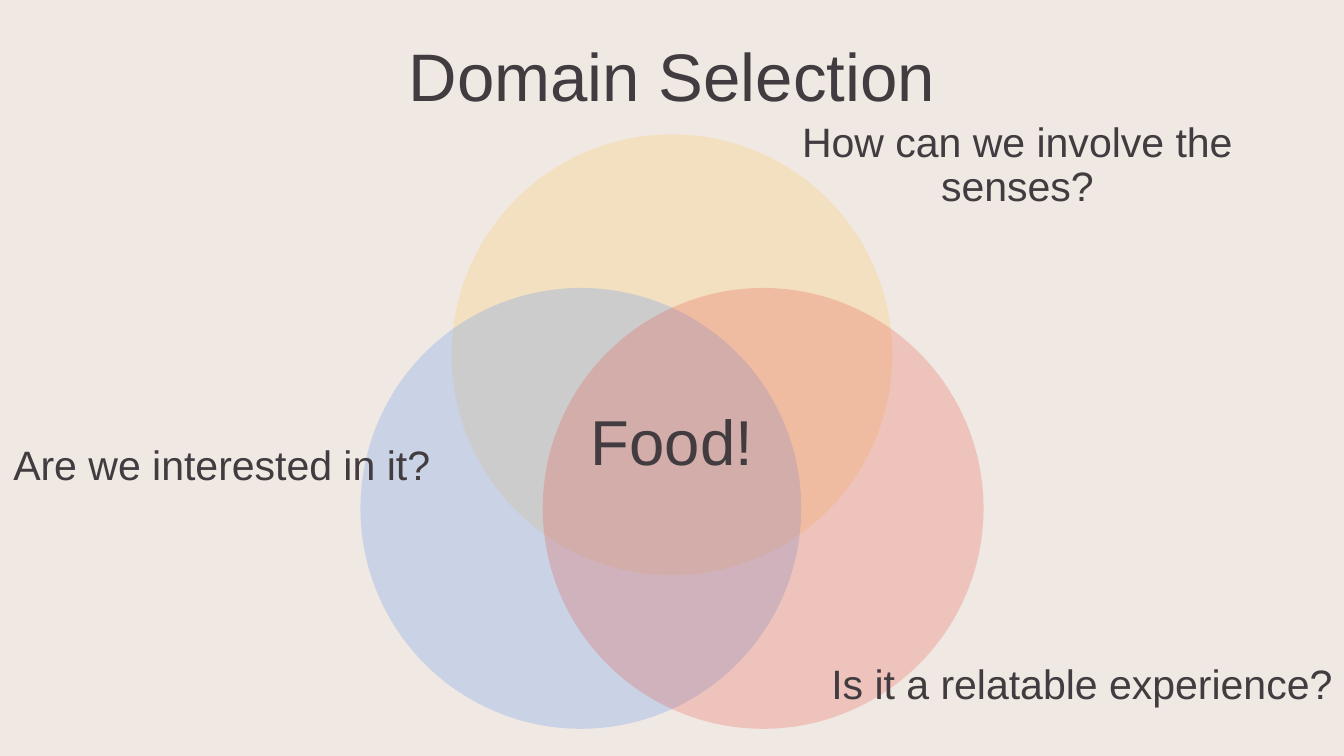
from lxml import etree
from pptx import Presentation
from pptx.dml.color import RGBColor
from pptx.enum.shapes import MSO_SHAPE
from pptx.enum.text import MSO_ANCHOR, PP_ALIGN
from pptx.oxml.ns import qn
from pptx.util import Inches, Pt

OVAL = MSO_SHAPE.OVAL
BOTTOM = MSO_ANCHOR.BOTTOM
CENTER = PP_ALIGN.CENTER

# Lengths are in grid columns: 100 columns span the slide's width.
COLS, ROWS = 100, 56.25
COL = Inches(10) / COLS
MID = COLS / 2

THEME = {
    "font": "Arial",
    "back": "F0E9E3",
    "ink": "423C41",
    "label": 22,
    "core": 34,
    "title": 36,
}

# Circles: steps right of the middle, steps down, colour, opacity in percent
SIZE, TOP = 32.8, 10
STEP_X, STEP_Y = 6.78, 11.43
CIRCLES = [
    (0, 0, "FFBF3A", 20),
    (-1, 1, "6D9EEB", 29),
    (1, 1, "E94032", 22),
]

# Texts: wording, type size, centre, bottom, width, height
TEXTS = [
    ("How can we involve the senses?", "label", 75.7, 15.65, 43.2, 4.3),
    ("Are we interested in it?", "label", 16.5, 36.45, 37.8, 4.3),
    ("Is it a relatable experience?", "label", 80.5, 52.7, 37.8, 4.3),
    ("Food!", "core", MID, 35.65, 13, 3.8),
    ("Domain Selection", "title", MID, 8.65, 47.9, 4.3),
]

FRAME = {
    "word_wrap": True,
    "vertical_anchor": BOTTOM,
    "margin_left": 0,
    "margin_right": 0,
    "margin_top": 0,
    "margin_bottom": 0,
}
PARA = {"alignment": CENTER, "line_spacing": 0.9}


def color(name):
    return RGBColor.from_string(name)


def place(*cols):
    return [round(n * COL) for n in cols]


def style(item, values):
    for key, value in values.items():
        setattr(item, key, value)


def add_circle(slide, right, down, tint, alpha):
    left = MID + right * STEP_X - SIZE / 2
    top = TOP + down * STEP_Y
    disc = slide.shapes.add_shape(OVAL, *place(left, top, SIZE, SIZE))
    disc.shadow.inherit = False
    disc.line.fill.background()
    disc.fill.solid()
    disc.fill.fore_color.rgb = color(tint)
    node = disc.element.spPr.find(".//" + qn("a:srgbClr"))
    etree.SubElement(node, qn("a:alpha"), val=str(alpha * 1000))


def add_text(slide, words, kind, center, bottom, width, height):
    spot = place(center - width / 2, bottom - height, width, height)
    frame = slide.shapes.add_textbox(*spot).text_frame
    style(frame, FRAME)
    para = frame.paragraphs[0]
    style(para, PARA)
    run = para.add_run()
    run.text = words
    style(run.font, {"name": THEME["font"], "size": Pt(THEME[kind])})
    run.font.color.rgb = color(THEME["ink"])


def main():
    deck = Presentation()
    wide, high = place(COLS, ROWS)
    style(deck, {"slide_width": wide, "slide_height": high})
    slide = deck.slides.add_slide(deck.slide_layouts[6])
    fill = slide.background.fill
    fill.solid()
    fill.fore_color.rgb = color(THEME["back"])
    for circle in CIRCLES:
        add_circle(slide, *circle)
    for text in TEXTS:
        add_text(slide, *text)
    deck.save("out.pptx")


if __name__ == "__main__":
    main()
